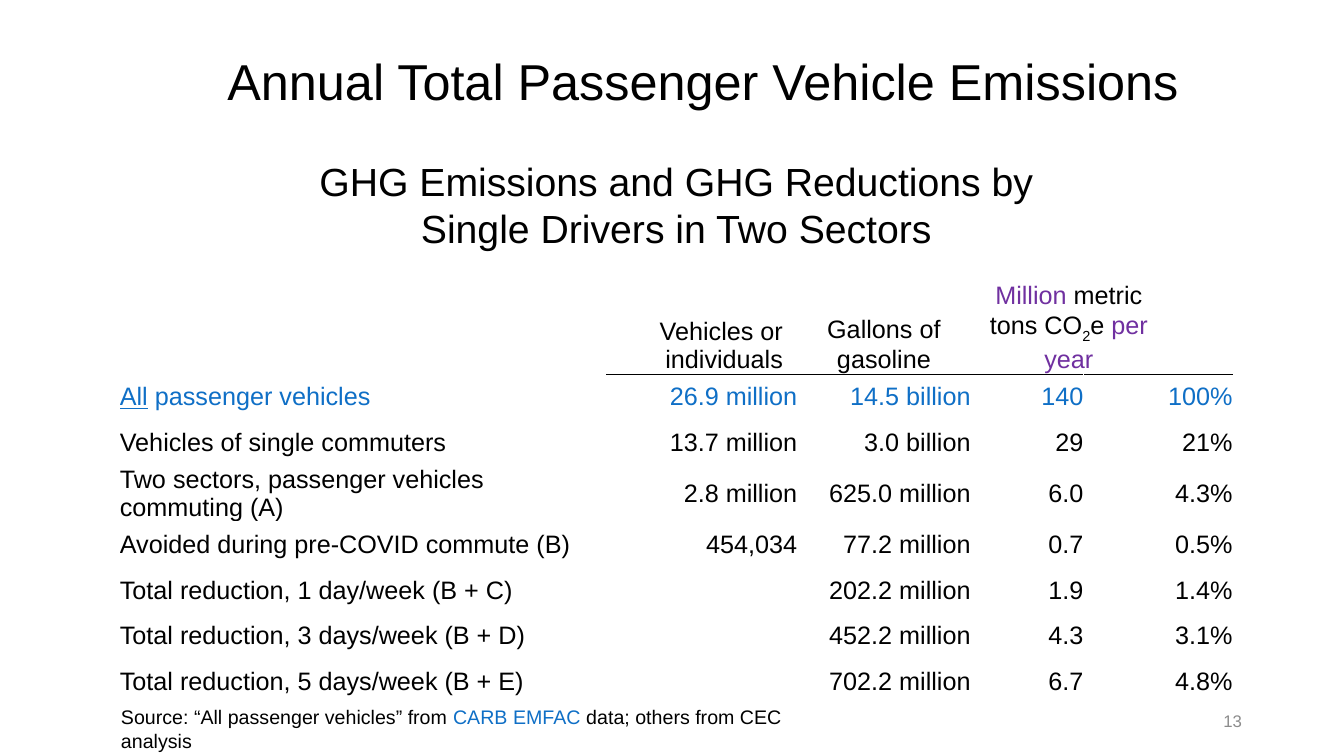
from lxml import etree
from pptx import Presentation
from pptx.dml.color import RGBColor
from pptx.enum.text import MSO_ANCHOR, MSO_AUTO_SIZE, PP_ALIGN
from pptx.oxml.ns import qn
from pptx.util import Cm, Pt

LEFT, MID, RIGHT = PP_ALIGN.LEFT, PP_ALIGN.CENTER, PP_ALIGN.RIGHT
TOP, CENTER, BOTTOM = MSO_ANCHOR.TOP, MSO_ANCHOR.MIDDLE, MSO_ANCHOR.BOTTOM
BLACK = RGBColor(0x00, 0x00, 0x00)
BLUE = RGBColor(0x0F, 0x6F, 0xC6)
PURPLE = RGBColor(0x70, 0x30, 0xA0)
GRAY = RGBColor(0x8C, 0x8C, 0x8C)

# A run is (text, format); a paragraph is a list of runs.
TITLE = [("Annual Total Passenger Vehicle Emissions", {})]
CAPTION = [
    [("GHG Emissions and GHG Reductions by", {})],
    [("Single Drivers in Two Sectors", {})],
]
HEADS = [
    (1, RIGHT, 1.0, [("Vehicles or individuals", {})]),
    (2, MID, 1.07, [("Gallons of gasoline", {})]),
    (3, MID, 1.07, [
        ("Million", {"color": PURPLE}), (" metric tons CO", {}),
        ("2", {"base": -25000}), ("e ", {}), ("per year", {"color": PURPLE}),
    ]),
]
ROWS = [
    ("All passenger vehicles", "26.9 million", "14.5 billion", "140", "", "100%"),
    ("Vehicles of single commuters", "13.7 million", "3.0 billion", "29", "", "21%"),
    ("Two sectors, passenger vehicles commuting (A)", "2.8 million",
     "625.0 million", "6.0", "", "4.3%"),
    ("Avoided during pre-COVID commute (B)", "454,034", "77.2 million", "0.7", "", "0.5%"),
    ("Total reduction, 1 day/week (B + C)", "", "202.2 million", "1.9", "", "1.4%"),
    ("Total reduction, 3 days/week (B + D)", "", "452.2 million", "4.3", "", "3.1%"),
    ("Total reduction, 5 days/week (B + E)", "", "702.2 million", "6.7", "", "4.8%"),
]
SOURCE = [
    ("Source: “All passenger vehicles” from ", {}),
    ("CARB EMFAC", {"color": BLUE}),
    (" data; others from CEC analysis", {}),
]
PAGE = [("13", {"color": GRAY})]
WIDTHS = [12.27, 4.8, 4.37, 2.84, 2.11, 1.65]
HEIGHTS = [2.72] * 2 + [1.15] * len(ROWS)


def write(frame, paras, size, align=LEFT, **look):
    """Fill a text frame; look holds paragraph attributes."""
    for i, runs in enumerate(paras):
        para = frame.paragraphs[0] if i == 0 else frame.add_paragraph()
        for name, value in {"alignment": align, **look}.items():
            setattr(para, name, value)
        for text, form in runs:
            run = para.add_run()
            run.text = text
            font = {"name": "Arial", "size": Pt(size), "bold": False,
                    "underline": form.get("line", False)}
            for name, value in font.items():
                setattr(run.font, name, value)
            run.font.color.rgb = form.get("color", BLACK)
            if "base" in form:
                run.font._element.set("baseline", str(form["base"]))


def place(shape, left, top, width, height, anchor):
    box = {"left": left, "top": top, "width": width, "height": height}
    for name, value in box.items():
        setattr(shape, name, Cm(value))
    frame = shape.text_frame
    frame.word_wrap = True
    frame.auto_size = MSO_AUTO_SIZE.NONE
    frame.vertical_anchor = anchor
    return frame


def set_cell(cell, anchor, side):
    look = {"vertical_anchor": anchor, "margin_left": Cm(side),
            "margin_right": Cm(side), "margin_top": 0, "margin_bottom": 0}
    for name, value in look.items():
        setattr(cell, name, value)
    cell.fill.background()


def rule(cell, edge):
    line = etree.Element(qn("a:" + edge), w=str(Pt(1)))
    fill = etree.SubElement(line, qn("a:solidFill"))
    etree.SubElement(fill, qn("a:srgbClr"), val=str(BLACK))
    cell._tc.get_or_add_tcPr().insert(0, line)


def add_grid(slide):
    frame = slide.shapes.add_table(
        len(HEIGHTS), len(WIDTHS), Cm(3.02), Cm(3.99),
        Cm(sum(WIDTHS)), Cm(sum(HEIGHTS)))
    grid = frame.table
    grid.first_row = grid.horz_banding = False
    for col, width in zip(grid.columns, WIDTHS):
        col.width = Cm(width)
    for row, height in zip(grid.rows, HEIGHTS):
        row.height = Cm(height)

    anchors = [TOP, BOTTOM] + [CENTER] * len(ROWS)
    for r, anchor in enumerate(anchors):
        for cell in grid.rows[r].cells:
            set_cell(cell, anchor, 0.36 if r < 2 else 0)
    for c in range(1, len(WIDTHS)):
        rule(grid.cell(1, c), "lnB")
        rule(grid.cell(2, c), "lnT")
    grid.cell(0, 0).merge(grid.cell(0, len(WIDTHS) - 1))
    grid.cell(1, 3).merge(grid.cell(1, 4))

    write(grid.cell(0, 0).text_frame, CAPTION, 28, MID, line_spacing=1.07)
    for c, align, space, runs in HEADS:
        write(grid.cell(1, c).text_frame, [runs], 18, align, line_spacing=space)
    for r, row in enumerate(ROWS):
        color = BLACK if r else BLUE
        after = Pt(0 if r else 6)
        for c, text in enumerate(row):
            if not text:
                continue
            runs = [(text, {"color": color})]
            if r == c == 0:
                runs = [(text[:3], {"color": color, "line": True}),
                        (text[3:], {"color": color})]
            write(grid.cell(r + 2, c).text_frame, [runs], 18,
                  RIGHT if c else LEFT, space_after=after)


def main():
    deck = Presentation()
    deck.slide_width, deck.slide_height = Cm(33.87), Cm(19.05)
    slide = deck.slides.add_slide(deck.slide_layouts[5])
    shapes = slide.shapes

    title = place(shapes.title, 3.89, 0.66, 27.66, 2.9, CENTER)
    write(title, [TITLE], 36, MID, line_spacing=0.9)
    add_grid(slide)
    notes = [
        (PAGE, 12, RIGHT, (23.93, 17.65, 7.62, 1.02, CENTER)),
        (SOURCE, 14, LEFT, (2.8, 17.65, 18.6, 0.86, TOP)),
    ]
    for runs, size, align, spot in notes:
        box = shapes.add_textbox(0, 0, 0, 0)
        write(place(box, *spot), [runs], size, align)
    deck.save("out.pptx")


if __name__ == "__main__":
    main()
